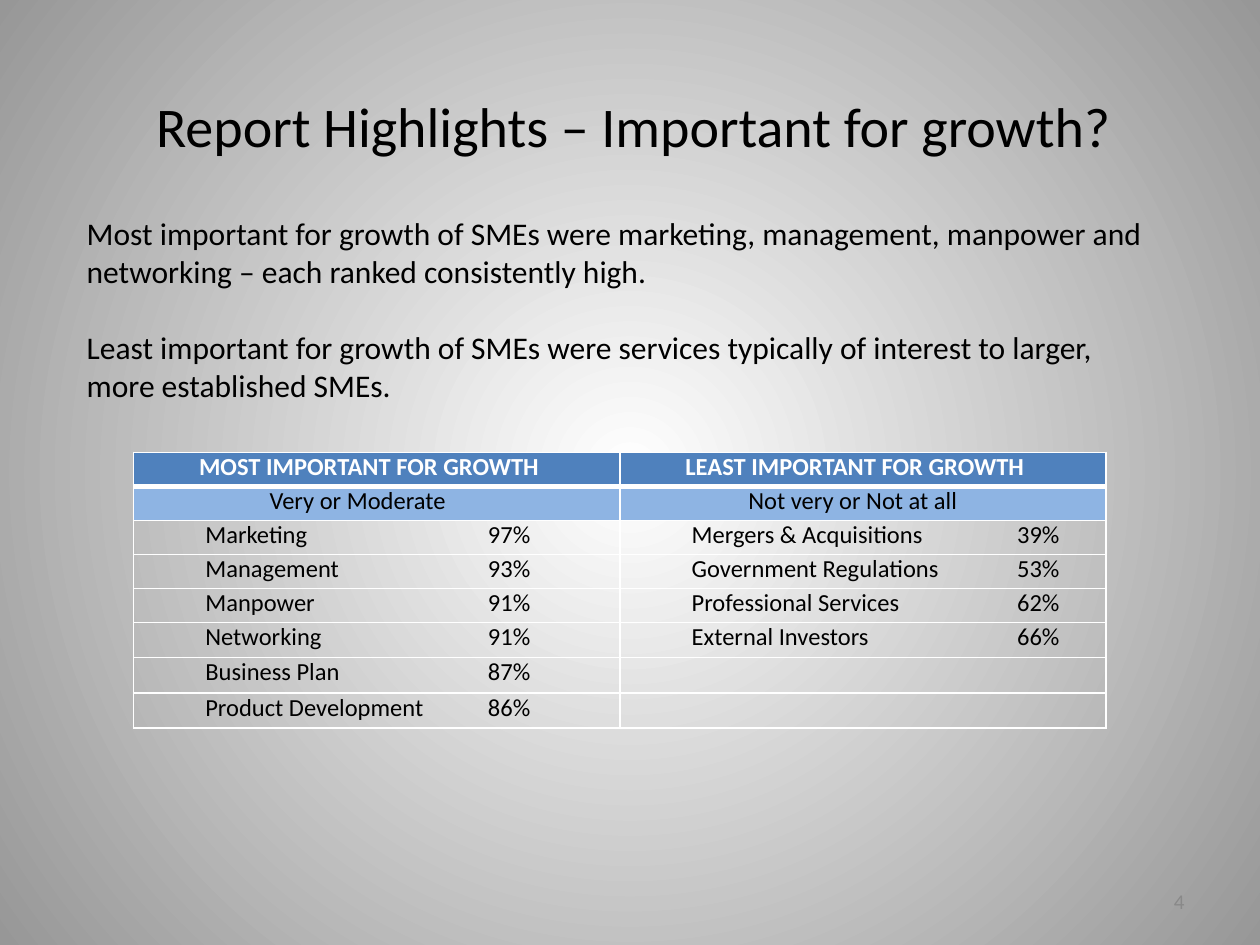
from lxml.etree import SubElement
from pptx import Presentation
from pptx.dml.color import RGBColor
from pptx.enum.text import MSO_ANCHOR, PP_ALIGN
from pptx.oxml.ns import qn
from pptx.util import Inches, Pt

BLACK = RGBColor(0x00, 0x00, 0x00)
WHITE = RGBColor(0xFF, 0xFF, 0xFF)
EDGE_GRAY = RGBColor(0x97, 0x97, 0x97)
NUMBER_GRAY = RGBColor(0x89, 0x89, 0x89)
HEADER_BLUE = RGBColor(0x4F, 0x81, 0xBD)
SUBHEADER_BLUE = RGBColor(0x8E, 0xB4, 0xE3)

HEADINGS = ["MOST IMPORTANT FOR GROWTH", "LEAST IMPORTANT FOR GROWTH"]
SUBHEADINGS = ["Very or Moderate", "Not very or Not at all"]
SUBHEADING_INDENTS = [1.01, 0.95]
RATINGS = [
    [("Marketing", "97%"), ("Management", "93%"), ("Manpower", "91%"),
     ("Networking", "91%"), ("Business Plan", "87%"),
     ("Product Development", "86%")],
    [("Mergers & Acquisitions", "39%"), ("Government Regulations", "53%"),
     ("Professional Services", "62%"), ("External Investors", "66%")],
]
PERCENT_STOPS = [3.08, 3.42]
ROW_HEIGHTS = [0.27] * 5 + [0.28] * 3


class SlideBuilder:
    """Holds the text style and the slide being built."""

    def __init__(self, page, font_name="Calibri"):
        self.page = page
        self.font_name = font_name

    def style(self, font, size, color=BLACK, bold=False):
        values = {"name": self.font_name, "size": Pt(size), "bold": bold}
        for name, value in values.items():
            setattr(font, name, value)
        font.color.rgb = color

    def background(self, center, edge):
        fill = self.page.background.fill
        fill.gradient()
        for stop, position, color in zip(fill.gradient_stops, (0, 1), (center, edge)):
            stop.position = position
            stop.color.rgb = color
        gradient = self.page.element.find(".//" + qn("a:gradFill"))
        gradient.remove(gradient.find(qn("a:lin")))
        circle = SubElement(gradient, qn("a:path"), path="circle")
        SubElement(circle, qn("a:fillToRect"), l="50000", t="50000", r="50000", b="50000")

    def text(self, place, paragraphs, size, color=BLACK, align=PP_ALIGN.LEFT,
             anchor=MSO_ANCHOR.TOP, gap=0):
        box = self.page.shapes.add_textbox(*map(Inches, place))
        frame = box.text_frame
        frame.word_wrap = True
        frame.vertical_anchor = anchor
        for index, words in enumerate(paragraphs):
            para = frame.add_paragraph() if index else frame.paragraphs[0]
            para.alignment = align
            if index:
                para.space_before = Pt(gap)
            span = para.add_run()
            span.text = words
            self.style(span.font, size, color)

    def table(self, place, row_heights, column_count):
        shape = self.page.shapes.add_table(
            len(row_heights), column_count, *map(Inches, place))
        table = shape.table
        table.first_row = False
        table.horz_banding = False
        for row, height in zip(table.rows, row_heights):
            row.height = Inches(height)
        return table

    def cell(self, cell, words="", fill=None, color=BLACK, bold=False,
             indent=0, stops=(), bottom=1):
        values = {"margin_left": Inches(0.07), "margin_right": Inches(0.07),
                  "margin_top": 0, "margin_bottom": 0}
        for name, value in values.items():
            setattr(cell, name, value)

        # Borders come before the fill in the cell properties
        properties = cell._tc.get_or_add_tcPr()
        for side, width in {"L": 1, "R": 1, "T": 1, "B": bottom}.items():
            line = SubElement(properties, qn("a:ln" + side), w=str(Pt(width)))
            solid = SubElement(line, qn("a:solidFill"))
            SubElement(solid, qn("a:srgbClr"), val=str(WHITE))
        if fill is None:
            cell.fill.background()
        else:
            cell.fill.solid()
            cell.fill.fore_color.rgb = fill

        para = cell.text_frame.paragraphs[0]
        para_properties = para._p.get_or_add_pPr()
        if indent:
            para_properties.set("marL", str(Inches(indent)))
            para_properties.set("indent", "0")
        if stops:
            tabs = SubElement(para_properties, qn("a:tabLst"))
            for position, align in stops:
                SubElement(tabs, qn("a:tab"), pos=str(Inches(position)), algn=align)
        self.style(para.font, 14, color, bold)
        if words:
            span = para.add_run()
            span.text = words
            self.style(span.font, 14, color, bold)
        else:
            end = SubElement(para._p, qn("a:endParaRPr"), sz="1400")
            SubElement(end, qn("a:latin"), typeface=self.font_name)


def main():
    deck = Presentation()
    deck.slide_width, deck.slide_height = Inches(10), Inches(7.5)
    builder = SlideBuilder(deck.slides.add_slide(deck.slide_layouts[6]))
    builder.background(WHITE, EDGE_GRAY)

    # Title
    builder.text((1.14, 0.68, 7.95, 0.64),
                 ["Report Highlights – Important for growth?"], 32)

    # Ratings table
    table = builder.table((1.06, 3.59, 7.72, 2.16), ROW_HEIGHTS, len(RATINGS))
    for column, ratings in enumerate(RATINGS):
        builder.cell(table.cell(0, column), HEADINGS[column], HEADER_BLUE,
                     WHITE, bold=True, indent=0.45, bottom=3)
        builder.cell(table.cell(1, column), SUBHEADINGS[column],
                     SUBHEADER_BLUE, indent=SUBHEADING_INDENTS[column])
        stops = [(0.5, "l"), (PERCENT_STOPS[column], "r")]
        for row in range(2, len(ROW_HEIGHTS)):
            if row - 2 < len(ratings):
                name, percent = ratings[row - 2]
                builder.cell(table.cell(row, column), f"\t{name}\t{percent}", stops=stops)
            else:
                builder.cell(table.cell(row, column))

    # Findings
    builder.text((0.59, 1.64, 8.74, 1.62), [
        "Most important for growth of SMEs were marketing, management, "
        "manpower and networking – each ranked consistently high.",
        "Least important for growth of SMEs were services typically of "
        "interest to larger, more established SMEs.",
    ], 18, anchor=MSO_ANCHOR.MIDDLE, gap=22)

    # Slide number
    builder.text((7.17, 6.95, 2.33, 0.4), ["4"], 12, NUMBER_GRAY,
                 PP_ALIGN.RIGHT, MSO_ANCHOR.MIDDLE)

    deck.save("out.pptx")


if __name__ == "__main__":
    main()
